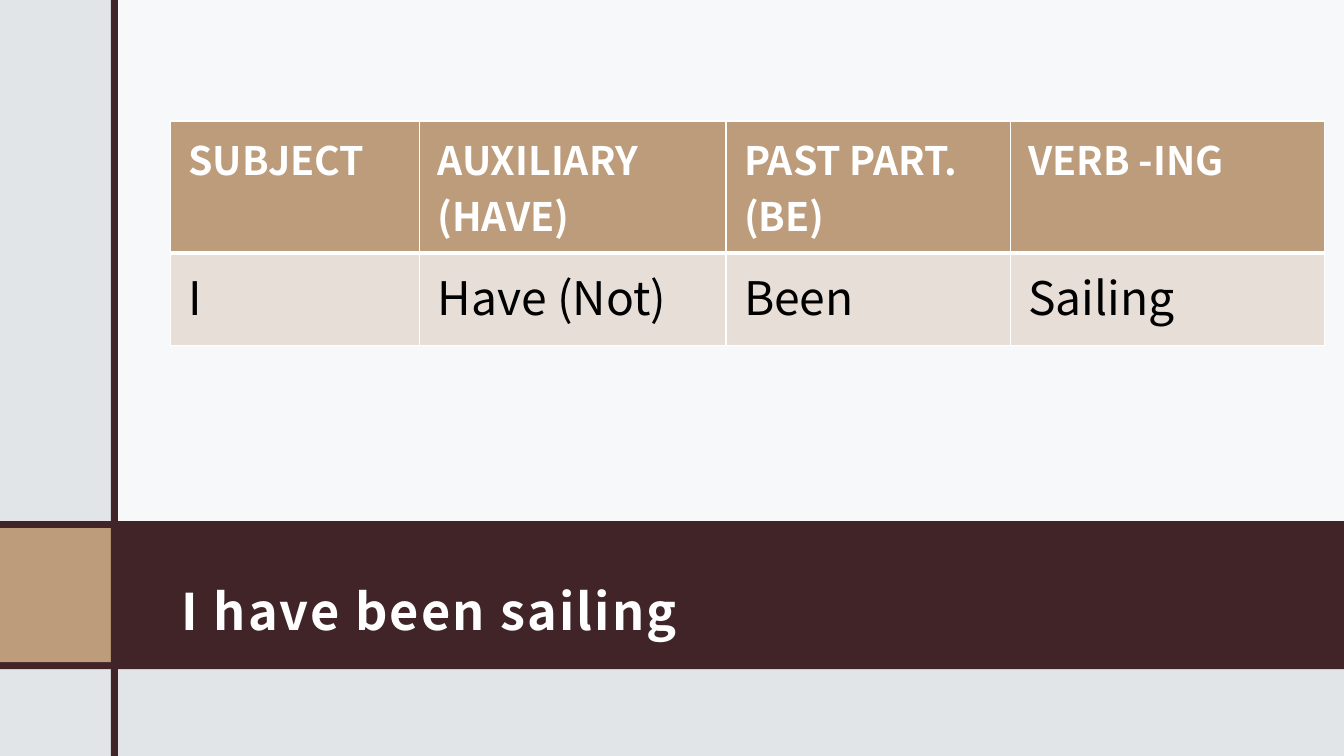
from dataclasses import dataclass

from lxml.etree import SubElement
from pptx import Presentation
from pptx.dml.color import RGBColor
from pptx.enum.shapes import MSO_SHAPE
from pptx.enum.text import MSO_ANCHOR
from pptx.oxml import parse_xml
from pptx.oxml.ns import nsdecls, qn
from pptx.util import Inches, Pt


@dataclass(frozen=True)
class Theme:
    """Colours, font and type sizes of the slide."""
    pale: str = "E2E5E8"
    white: str = "FFFFFF"
    black: str = "000000"
    plum: str = "412427"
    tan: str = "BC9C7A"
    sand: str = "E7DED7"
    font: str = "Noto Sans CJK JP"
    title: int = 36
    head: int = 28
    body: int = 33


THEME = Theme()
WIDTH, HEIGHT = 13.33, 7.5
COLS = (2.47, 3.04, 2.82, 3.12)
ROWS = (1.31, 0.92)
WORDS = (
    ("SUBJECT", "AUXILIARY\n(HAVE)", "PAST PART. (BE)", "VERB -ING"),
    ("I", "Have (Not)", "Been", "Sailing"),
)


def add_block(slide, left, top, width, height, color, alpha=100):
    """Draw a plain filled rectangle, see-through if alpha is below 100."""
    block = slide.shapes.add_shape(
        MSO_SHAPE.RECTANGLE, Inches(left), Inches(top), Inches(width), Inches(height))
    block.shadow.inherit = False
    block.line.fill.background()
    block.fill.solid()
    block.fill.fore_color.rgb = RGBColor.from_string(color)
    if alpha < 100:
        tint = block.fill._xPr.find(".//" + qn("a:srgbClr"))
        SubElement(tint, qn("a:alpha")).set("val", str(alpha * 1000))


def style_text(frame, size, color, bold):
    """Format every run in a text frame."""
    for para in frame.paragraphs:
        for run in para.runs:
            run.font.name = THEME.font
            run.font.size = Pt(size)
            run.font.bold = bold
            run.font.color.rgb = RGBColor.from_string(color)


def add_title(slide, text):
    """Place the spaced-out title on the dark band."""
    box = slide.shapes.add_textbox(Inches(1.68), Inches(5.33), Inches(10.95), Inches(1.13))
    frame = box.text_frame
    frame.word_wrap = True
    frame.vertical_anchor = MSO_ANCHOR.MIDDLE
    frame.margin_left = frame.margin_right = frame.margin_top = Inches(0.12)
    frame.margin_bottom = Inches(0.1)
    frame.text = text
    para = frame.paragraphs[0]
    para.line_spacing = 1.5
    style_text(frame, THEME.title, THEME.white, True)
    para.runs[0]._r.get_or_add_rPr().set("spc", "150")


def set_edges(cell, top, bottom):
    """Give a cell white borders, with top and bottom widths in points."""
    props = cell._tc.get_or_add_tcPr()
    edges = (("L", 1), ("R", 1), ("T", top), ("B", bottom))
    for place, (side, width) in enumerate(edges):
        props.insert(place, parse_xml(
            f'<a:ln{side} {nsdecls("a")} w="{Pt(width)}"><a:solidFill>'
            f'<a:srgbClr val="{THEME.white}"/></a:solidFill></a:ln{side}>'))


def fill_cell(cell, text, head):
    """Write and style one header or body cell."""
    cell.margin_left = cell.margin_right = Inches(0.18)
    cell.margin_top = cell.margin_bottom = Inches(0.09)
    cell.fill.solid()
    cell.fill.fore_color.rgb = RGBColor.from_string(THEME.tan if head else THEME.sand)
    cell.text_frame.text = text
    if head:
        style_text(cell.text_frame, THEME.head, THEME.white, True)
        set_edges(cell, 1, 3)
    else:
        style_text(cell.text_frame, THEME.body, THEME.black, False)
        set_edges(cell, 3, 1)


def add_grid(slide):
    """Add the table of sentence parts."""
    table = slide.shapes.add_table(
        len(ROWS), len(COLS), Inches(1.69), Inches(1.2),
        Inches(sum(COLS)), Inches(sum(ROWS))).table
    for col, width in zip(table.columns, COLS):
        col.width = Inches(width)
    for row, height, words, head in zip(table.rows, ROWS, WORDS, (True, False)):
        row.height = Inches(height)
        for cell, text in zip(row.cells, words):
            fill_cell(cell, text, head)


def main():
    """Build and save the slide."""
    deck = Presentation()
    deck.slide_width, deck.slide_height = Inches(WIDTH), Inches(HEIGHT)
    slide = deck.slides.add_slide(deck.slide_layouts[6])
    slide.background.fill.solid()
    slide.background.fill.fore_color.rgb = RGBColor.from_string(THEME.pale)
    add_block(slide, 1.14, 0, WIDTH - 1.14, 5.17, THEME.white, 75)
    add_block(slide, 0, 5.17, WIDTH, 1.47, THEME.plum)
    add_title(slide, "I have been sailing")
    add_block(slide, 0, 5.24, 1.1, 1.33, THEME.tan)
    add_block(slide, 1.1, 0, 0.07, HEIGHT, THEME.plum)
    add_grid(slide)
    deck.save("out.pptx")


if __name__ == "__main__":
    main()
